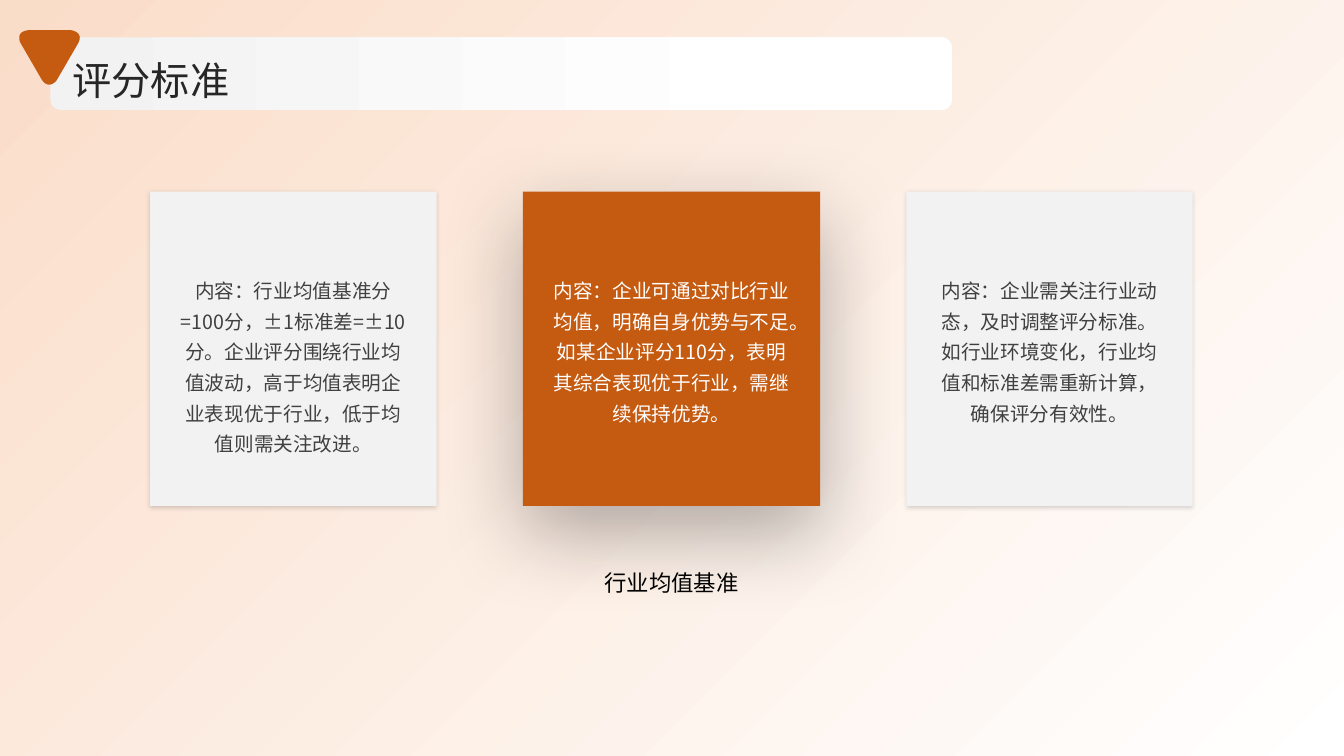
from lxml.etree import SubElement as Sub
from pptx import Presentation
from pptx.dml.color import RGBColor as RGB
from pptx.enum.shapes import MSO_SHAPE as Kind
from pptx.enum.text import MSO_ANCHOR as Anchor, PP_ALIGN as Align
from pptx.oxml.ns import qn
from pptx.util import Inches, Pt

WIDE, HIGH = 13.33, 7.5
FACE = "Noto Sans CJK SC"
WHITE = RGB(0xFF, 0xFF, 0xFF)
BLACK = RGB(0, 0, 0)
PEACH = RGB(0xFA, 0xDD, 0xC9)
RUST = RGB(0xC5, 0x5A, 0x11)
PALE = RGB(0xF2, 0xF2, 0xF2)
GREY = RGB(0x40, 0x40, 0x40)
DARK = RGB(0x26, 0x26, 0x26)

SOFT = {"alpha": 15, "blur": 3, "dist": 1}
DEEP = {"alpha": 30, "blur": 60, "dist": 20}
PLAIN = {"width": 2.84, "fill": PALE, "ink": GREY, "shade": SOFT}
BOLD = {"width": 2.95, "fill": RUST, "ink": WHITE, "shade": DEEP}
CARDS = [
    ("内容：行业均值基准分=100分，±1标准差=±10分。企业评分围绕行业均值波动，"
     "高于均值表明企业表现优于行业，低于均值则需关注改进。", PLAIN),
    ("内容：企业可通过对比行业均值，明确自身优势与不足。如某企业评分110分，"
     "表明其综合表现优于行业，需继续保持优势。", BOLD),
    ("内容：企业需关注行业动态，及时调整评分标准。如行业环境变化，"
     "行业均值和标准差需重新计算，确保评分有效性。", PLAIN),
]
# Each corner of the badge: curve start, two handles, curve end, as shares of its box
CORNERS = [
    [(0.86, 0), (0.86, 0), (1.07, 0.03), (0.98, 0.23)],
    [(0.62, 0.92), (0.62, 0.92), (0.5, 1.1), (0.38, 0.92)],
    [(0.02, 0.23), (0.02, 0.23), (-0.07, 0.03), (0.14, 0)],
]


def place(box):
    return [Inches(n) for n in box]


def write(shape, text, size, ink, **fmt):
    """Put one paragraph in a shape; fmt may give pad, anchor, align and space."""
    frame = shape.text_frame
    frame.word_wrap = True
    frame.vertical_anchor = fmt.get("anchor", Anchor.TOP)
    sides = ("left", "top", "right", "bottom")
    for side, pad in zip(sides, fmt.get("pad", (0.1, 0.05, 0.1, 0.05))):
        setattr(frame, "margin_" + side, Inches(pad))
    para = frame.paragraphs[0]
    para.alignment = fmt.get("align", Align.CENTER)
    para.line_spacing = fmt.get("space", 1.3)
    run = para.add_run()
    run.text = text
    for key, value in {"size": Pt(size), "name": FACE}.items():
        setattr(run.font, key, value)
    run.font.color.rgb = ink
    Sub(run._r.get_or_add_rPr(), qn("a:ea"), typeface=FACE)


def flat(shape):
    shape.line.fill.background()
    shape.shadow.inherit = False
    return shape


def blend(shape, angle, *stops):
    """Fill with a gradient of (position, colour) stops."""
    shape.fill.gradient()
    shape.fill.gradient_angle = angle
    for stop, (pos, tint) in zip(shape.fill.gradient_stops, stops):
        stop.position = pos
        stop.color.rgb = tint


def shade(shape, alpha, blur, dist):
    """Cast a black shadow downwards."""
    effects = shape._element.spPr.find(qn("a:effectLst"))
    cast = Sub(effects, qn("a:outerShdw"), blurRad=str(Pt(blur)),
               dist=str(Pt(dist)), dir="5400000", algn="t", rotWithShape="0")
    tint = Sub(cast, qn("a:srgbClr"), val=str(BLACK))
    Sub(tint, qn("a:alpha"), val=str(alpha * 1000))


def backdrop(shapes, box):
    back = flat(shapes.add_shape(Kind.RECTANGLE, *place(box)))
    blend(back, 135, (0, WHITE), (1, PEACH))


def cards(shapes, box):
    """Set the cards in a row with equal gaps."""
    left, top, width, height = box
    gap = (width - sum(look["width"] for _, look in CARDS)) / (len(CARDS) - 1)
    for text, look in CARDS:
        spot = place((left, top, look["width"], height))
        card = flat(shapes.add_shape(Kind.RECTANGLE, *spot))
        card.fill.solid()
        card.fill.fore_color.rgb = look["fill"]
        shade(card, **look["shade"])
        write(card, text, 14, look["ink"], pad=(0.3, 0.8, 0.3, 0.05))
        left += look["width"] + gap


def caption(shapes, box):
    write(shapes.add_textbox(*place(box)), "行业均值基准", 16, BLACK)


def curve(ends, steps=10):
    """Points along a cubic curve."""
    for i in range(steps + 1):
        t = i / steps
        parts = ((1 - t) ** 3, 3 * t * (1 - t) ** 2, 3 * t * t * (1 - t), t ** 3)
        yield tuple(sum(k * p for k, p in zip(parts, axis)) for axis in zip(*ends))


def badge(shapes, box):
    left, top, width, height = place(box)
    dots = [(left + x * width, top + y * height)
            for ends in CORNERS for x, y in curve(ends)]
    pen = shapes.build_freeform(*dots[0])
    pen.add_line_segments(dots[1:], close=True)
    mark = flat(pen.convert_to_shape())
    mark.fill.solid()
    mark.fill.fore_color.rgb = RUST


def header(shapes, box):
    left, top, width, height = box
    bar = flat(shapes.add_shape(Kind.ROUNDED_RECTANGLE, *place(box)))
    bar.adjustments[0] = 0.14
    blend(bar, 0, (0, PALE), (0.8, WHITE))
    title = shapes.add_textbox(*place((left + 0.22, top + 0.14, 11.67, 0.51)))
    write(title, "评分标准", 28, DARK, pad=(0, 0, 0, 0),
          anchor=Anchor.MIDDLE, align=Align.LEFT, space=1.1)
    badge(shapes, (left - 0.31, top - 0.07, 0.6, 0.54))


def main():
    deck = Presentation()
    deck.slide_width, deck.slide_height = Inches(WIDE), Inches(HIGH)
    shapes = deck.slides.add_slide(deck.slide_layouts[6]).shapes
    backdrop(shapes, (0, 0, WIDE, HIGH))
    cards(shapes, (1.49, 1.9, 10.34, 3.12))
    caption(shapes, (0.72, 5.52, 11.88, 0.69))
    header(shapes, (0.5, 0.37, 8.94, 0.72))
    deck.save("out.pptx")


if __name__ == "__main__":
    main()
